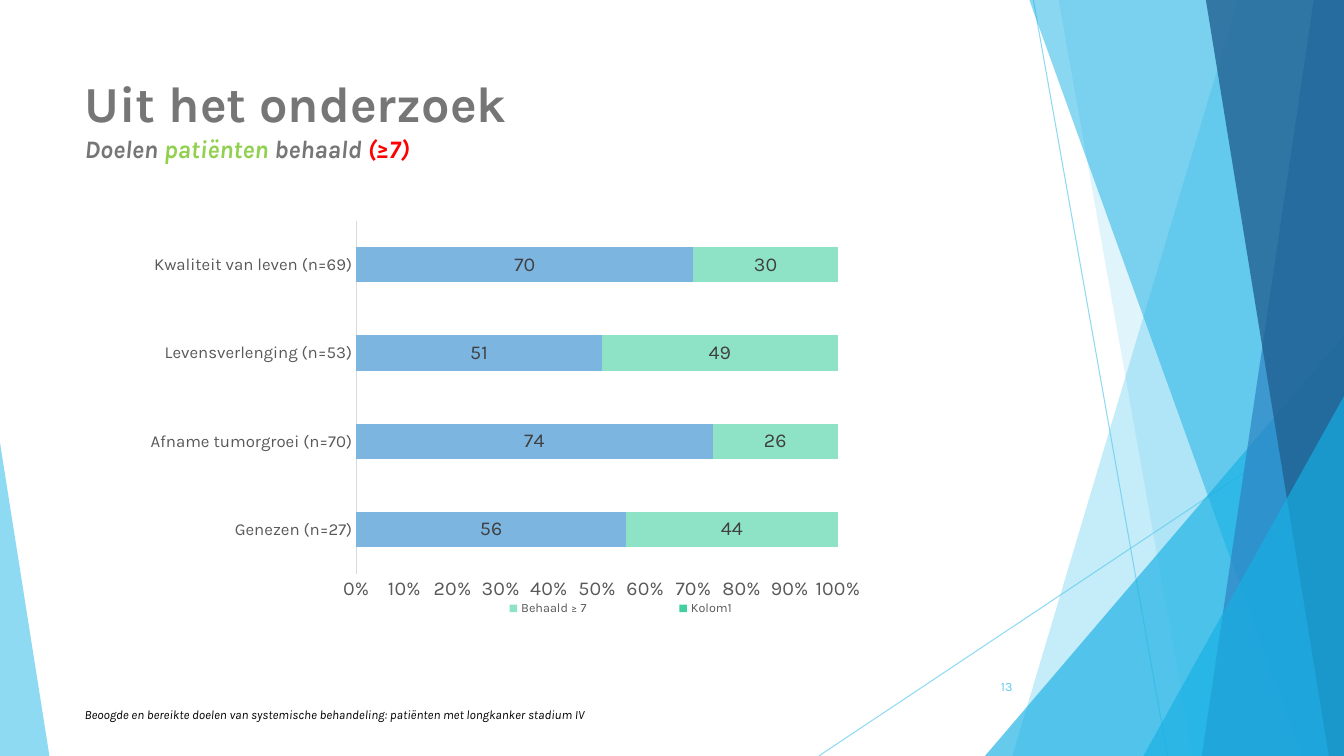
from dataclasses import dataclass

from lxml.etree import SubElement
from pptx import Presentation
from pptx.chart.data import CategoryChartData
from pptx.dml.color import RGBColor
from pptx.enum.chart import XL_CHART_TYPE, XL_LABEL_POSITION, XL_LEGEND_POSITION, XL_TICK_MARK
from pptx.enum.shapes import MSO_CONNECTOR, MSO_SHAPE
from pptx.enum.text import MSO_ANCHOR, MSO_AUTO_SIZE, PP_ALIGN
from pptx.oxml.ns import qn
from pptx.util import Inches, Pt

WIDTH, HEIGHT = Inches(13.33), Inches(7.5)


@dataclass(frozen=True)
class Theme:
    font: str = "Karla"
    sky: str = "5FCBEF"
    cyan: str = "17B0E4"
    blue: str = "2E83C3"
    navy: str = "226292"
    heading: str = "767676"
    green: str = "92D050"
    red: str = "FF0000"
    black: str = "000000"
    axis_text: str = "595959"
    axis_line: str = "D9D9D9"
    label_text: str = "404040"
    missed: str = "7CB5E0"
    reached: str = "8EE3C7"
    unused: str = "42D0A2"
    title_size: int = 36
    subtitle_size: int = 18
    value_size: int = 14
    category_size: int = 12
    small_size: int = 9


THEME = Theme()


def across(percent):
    return round(WIDTH * percent / 100)


def down(percent):
    return round(HEIGHT * percent / 100)


def area(left, top, width, height):
    """Turn percentages of the slide into a position and size."""
    return across(left), down(top), across(width), down(height)


def set_opacity(shape, percent):
    for color in shape.element.spPr.iter(qn("a:srgbClr")):
        SubElement(color, qn("a:alpha")).set("val", str(percent * 1000))


def paint(shape, color, opacity):
    shape.shadow.inherit = False
    shape.fill.solid()
    shape.fill.fore_color.rgb = RGBColor.from_string(color)
    shape.line.fill.background()
    set_opacity(shape, opacity)


def style_font(font, size, color, bold=False, italic=False):
    font.name = THEME.font
    font.size = Pt(size)
    font.bold = bold
    font.italic = italic
    font.color.rgb = RGBColor.from_string(color)


def add_run(para, text, size, color, bold=False, italic=False):
    span = para.add_run()
    span.text = text
    style_font(span.font, size, color, bold, italic)


def add_ray(page, start, end):
    line = page.shapes.add_connector(
        MSO_CONNECTOR.STRAIGHT, across(start[0]), down(start[1]), across(end[0]), down(end[1]))
    line.line.color.rgb = RGBColor.from_string(THEME.sky)
    line.line.width = Pt(0.75)
    set_opacity(line, 70)
    SubElement(line.element.spPr, qn("a:effectLst"))


def add_panel(page, top_left, bottom_left, color, opacity):
    """Add a full-height panel that runs to the right edge of the slide."""
    outline = page.shapes.build_freeform(across(top_left), 0)
    outline.add_line_segments(
        [(WIDTH, 0), (WIDTH, HEIGHT), (across(bottom_left), HEIGHT)], close=True)
    paint(outline.convert_to_shape(), color, opacity)


def add_corner(page, left, top, width, apex, color, opacity):
    """Add a triangle that stands on the bottom edge of the slide."""
    corner = page.shapes.add_shape(
        MSO_SHAPE.ISOSCELES_TRIANGLE, *area(left, top, width, 100 - top))
    corner.adjustments[0] = apex
    paint(corner, color, opacity)


def add_decoration(page):
    add_ray(page, (76.89, 0), (86.87, 100))
    add_ray(page, (100, 53.73), (60.92, 100))
    add_panel(page, 92.12, 75.32, THEME.sky, 36)
    add_panel(page, 78.77, 88.75, THEME.sky, 20)
    add_corner(page, 73.29, 44.4, 26.71, 1, THEME.cyan, 66)
    add_panel(page, 76.59, 96.85, THEME.cyan, 50)
    add_panel(page, 97.75, 89.42, THEME.blue, 70)
    add_panel(page, 89.72, 98.87, THEME.navy, 80)
    add_corner(page, 85.07, 52.4, 14.93, 1, THEME.cyan, 66)
    add_corner(page, 0, 58.53, 3.68, 0, THEME.sky, 70)


def fill_title(page):
    title = page.shapes.title
    title.left, title.top, title.width, title.height = area(5.55, 8.93, 70.52, 19.2)
    frame = title.text_frame
    frame.vertical_anchor = MSO_ANCHOR.TOP
    frame.auto_size = MSO_AUTO_SIZE.NONE
    para = frame.paragraphs[0]
    para.alignment = PP_ALIGN.LEFT
    add_run(para, "Uit het onderzoek ", THEME.title_size, THEME.heading, bold=True)
    para.add_line_break()
    for text, color in (("Doelen ", THEME.heading), ("patiënten", THEME.green),
                        (" behaald", THEME.heading), (" (≥7)", THEME.red)):
        add_run(para, text, THEME.subtitle_size, color, bold=True, italic=True)


def add_note(page, place, text, color, alignment, italic=False):
    box = page.shapes.add_textbox(*area(*place))
    box.text_frame.word_wrap = True
    box.text_frame.vertical_anchor = MSO_ANCHOR.MIDDLE
    para = box.text_frame.paragraphs[0]
    para.alignment = alignment
    add_run(para, text, THEME.small_size, color, italic=italic)


def set_layout(element, position, inner=False):
    """Place a chart part by percentages of the chart's size."""
    for old in element.findall(qn("c:layout")):
        element.remove(old)
    layout = SubElement(element, qn("c:layout"))
    element.remove(layout)
    anchor = element.find(qn("c:legendPos"))
    element.insert(0 if anchor is None else element.index(anchor) + 1, layout)
    manual = SubElement(layout, qn("c:manualLayout"))
    if inner:
        SubElement(manual, qn("c:layoutTarget")).set("val", "inner")
    for name in ("xMode", "yMode"):
        SubElement(manual, qn(f"c:{name}")).set("val", "edge")
    for name, percent in zip("xywh", position):
        SubElement(manual, qn(f"c:{name}")).set("val", str(percent / 100))


def drop_legend_entry(legend, index):
    entry = SubElement(legend, qn("c:legendEntry"))
    SubElement(entry, qn("c:idx")).set("val", str(index))
    SubElement(entry, qn("c:delete")).set("val", "1")
    legend.find(qn("c:legendPos")).addnext(entry)


def style_axis(axis, size):
    axis.has_major_gridlines = False
    axis.major_tick_mark = axis.minor_tick_mark = XL_TICK_MARK.NONE
    style_font(axis.tick_labels.font, size, THEME.axis_text)


def add_goal_chart(page):
    data = CategoryChartData(number_format="0")
    data.categories = ["Genezen (n=27)", "Afname tumorgroei (n=70)",
                       "Levensverlenging (n=53)", "Kwaliteit van leven (n=69)"]
    data.add_series("Niet behaald ≤ 6", (56, 74, 51, 70))
    data.add_series("Behaald ≥ 7", (44, 26, 49, 30))
    data.add_series("Kolom1", (None,) * 4)
    chart = page.shapes.add_chart(
        XL_CHART_TYPE.BAR_STACKED_100, *area(10.13, 28.13, 55.06, 56.4), data).chart
    chart.has_title = False
    style_font(chart.font, THEME.small_size, THEME.axis_text)

    style_axis(chart.category_axis, THEME.category_size)
    chart.category_axis.format.line.color.rgb = RGBColor.from_string(THEME.axis_line)
    chart.category_axis.format.line.width = Pt(0.75)
    values = chart.value_axis
    style_axis(values, THEME.value_size)
    values.format.line.fill.background()
    values.minimum_scale, values.maximum_scale, values.major_unit = 0, 1, 0.1
    values.tick_labels.number_format = "0%"
    values.tick_labels.number_format_is_linked = False

    plot = chart.plots[0]
    plot.vary_by_categories = False
    plot.gap_width, plot.overlap = 150, 100
    for series, color in zip(plot.series, (THEME.missed, THEME.reached, THEME.unused)):
        series.format.fill.solid()
        series.format.fill.fore_color.rgb = RGBColor.from_string(color)
        labels = series.data_labels
        labels.show_value = True
        labels.position = XL_LABEL_POSITION.CENTER
        style_font(labels.font, THEME.value_size, THEME.label_text)

    chart.has_legend = True
    chart.legend.position = XL_LEGEND_POSITION.BOTTOM
    chart.legend.include_in_layout = False
    style_font(chart.legend.font, THEME.small_size, THEME.axis_text)
    legend = chart.element.find(f".//{qn('c:legend')}")
    set_layout(chart.element.find(f".//{qn('c:plotArea')}"), (29.75, 1.9, 65.1, 82.8), inner=True)
    set_layout(legend, (38.5, 89.8, 54, 6))
    drop_legend_entry(legend, 2)


def main():
    deck = Presentation()
    deck.slide_width, deck.slide_height = WIDTH, HEIGHT
    page = deck.slides.add_slide(deck.slide_layouts.get_by_name("Title Only"))
    add_decoration(page)
    add_note(page, (70.44, 88.13, 5.63, 5.33), "13", THEME.sky, PP_ALIGN.RIGHT)
    fill_title(page)
    add_note(page, (5.55, 91.87, 51.69, 5.33),
             "Beoogde en bereikte doelen van systemische behandeling: "
             "patiënten met longkanker stadium IV", THEME.black, PP_ALIGN.LEFT, italic=True)
    add_goal_chart(page)
    deck.save("out.pptx")


if __name__ == "__main__":
    main()
